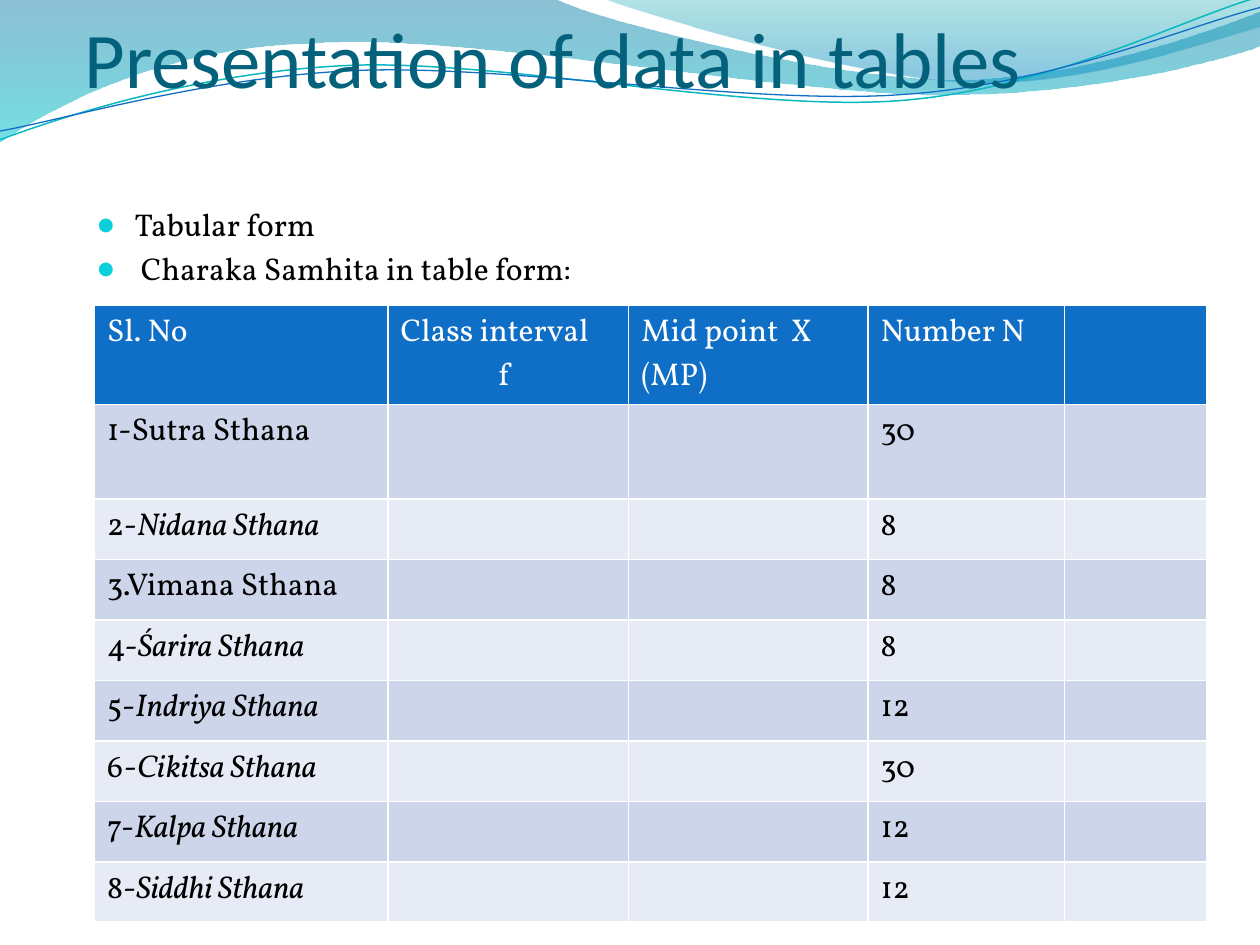
from lxml import etree
from pptx import Presentation
from pptx import util as u
from pptx.dml.color import RGBColor
from pptx.enum import text
from pptx.oxml.ns import qn

COLORS = {
    "title": "04617B", "body": "000000", "white": "FFFFFF", "bullet": "0BD0D9",
    "header": "0F6FC6", "odd": "CCD5EA", "even": "E7EBF5",
    "blue": "0074A1", "cyan": "00C6CF", "teal": "00A1A9", "sky": "008BBF",
    "aqua_line": "0AB8BF", "blue_line": "0F6FC6",
}
TITLE_FONT, BODY_FONT = "Calibri", "Vollkorn"

TITLE = "Presentation of data in tables"
BULLETS = ["Tabular form", " Charaka Samhita in table form:"]
HEADERS = [["Sl. No"], ["Class interval", "f "], ["Mid point  X (MP)"], ["Number N"], []]
# Plain part, italic part, number
STHANAS = [
    ("1-Sutra Sthana", "", 30), ("2-", "Nidana Sthana", 8),
    ("3.Vimana Sthana", "", 8), ("4-", "Śarira Sthana", 8),
    ("5-", "Indriya Sthana", 12), ("6-", "Cikitsa Sthana", 30),
    ("7-", "Kalpa Sthana", 12), ("8-", "Siddhi Sthana", 12),
]
COLUMN_WIDTHS = [2.33, 1.91, 1.9, 1.56, 1.13]
ROW_HEIGHTS = [0.79, 0.75] + [0.48] * 7

# Each segment is an end point, or two control points and an end point
BANDS = [
    {"start": (0, 0),
     "segments": [(4.4, -0.01), (4.76, 0.17, 6.64, 0.63, 7.58, 0.63),
                  (8.53, 0.63, 9.58, 0.26, 10, 0.09), (10.01, 0.36),
                  (9.83, 0.44, 8.7, 0.76, 7.46, 0.75),
                  (6.22, 0.75, 3.82, 0.28, 2.57, 0.34),
                  (1.29, 0.36, 0.46, 0.83, -0.01, 1.13), (0, 0)],
     "stops": [(0, "blue", 45), (1, "cyan", 55)]},
    {"start": (4.79, -0.01),
     "segments": [(5.09, 0.11, 6.82, 0.62, 7.69, 0.65),
                  (8.56, 0.69, 9.61, 0.32, 10, 0.21), (10, 0), (4.79, -0.01)],
     "stops": [(0, "teal", 30), (0.8, "sky", 45)]},
]
WAVES = [
    {"start": (0, 1.11),
     "segments": [(0.48, 0.93, 1.58, 0.57, 2.77, 0.52),
                  (3.95, 0.47, 5.93, 0.89, 7.13, 0.8),
                  (8.33, 0.71, 9.38, 0.15, 9.98, -0.02)],
     "line": ("aqua_line", 0.85)},
    {"start": (0, 1.04),
     "segments": [(0.47, 0.96, 1.64, 0.61, 2.83, 0.56),
                  (4.03, 0.51, 5.97, 0.84, 7.17, 0.75),
                  (8.36, 0.67, 9.41, 0.21, 10, 0.06)],
     "line": ("blue_line", 0.75)},
]


def rgb(name):
    return RGBColor.from_string(COLORS[name])


def add_child(parent, tag, **attributes):
    return etree.SubElement(parent, qn(tag), attributes)


def add_outline(slide, outline, close):
    """Draw through all points, then join each control pair and end point into a curve."""
    segments = [list(zip(segment[::2], segment[1::2])) for segment in outline["segments"]]
    builder = slide.shapes.build_freeform(*map(u.Inches, outline["start"]))
    builder.add_line_segments(
        [(u.Inches(x), u.Inches(y)) for points in segments for x, y in points], close=close)
    shape = builder.convert_to_shape()
    shape.shadow.inherit = False
    lines = iter(list(shape._element.spPr.iter(qn("a:lnTo"))))
    for points in segments:
        first, *others = [next(lines) for _ in points]
        if others:
            first.addprevious(curve := etree.Element(qn("a:cubicBezTo")))
            for line in (first, *others):
                curve.append(line[0])
                line.getparent().remove(line)
    return shape


def add_band(slide, band):
    shape = add_outline(slide, band, close=True)
    shape.line.fill.background()
    shape.fill.gradient()
    shape.fill.gradient_angle = 270
    for stop, (position, color, _) in zip(shape.fill.gradient_stops, band["stops"]):
        stop.position = position
        stop.color.rgb = rgb(color)
    colors = shape._element.spPr.iter(qn("a:srgbClr"))
    for element, (_, _, opacity) in zip(colors, band["stops"]):
        add_child(element, "a:alpha", val=str(opacity * 1000))


def add_wave(slide, wave):
    shape = add_outline(slide, wave, close=False)
    shape.fill.background()
    color, width = wave["line"]
    shape.line.color.rgb = rgb(color)
    shape.line.width = u.Pt(width)


def add_run(paragraph, content, color, size=18, font=BODY_FONT, italic=False):
    run = paragraph.add_run()
    run.text = content
    run.font.size = u.Pt(size)
    run.font.name = font
    run.font.bold = False
    run.font.italic = italic
    run.font.color.rgb = rgb(color)


def next_paragraph(frame, index):
    return frame.paragraphs[0] if index == 0 else frame.add_paragraph()


def format_title(slide):
    title = slide.shapes.title
    title.left, title.top, title.width, title.height = map(u.Inches, (0.67, 0.25, 8.92, 0.58))
    frame = title.text_frame
    frame.margin_left = frame.margin_right = frame.margin_bottom = 0
    frame.margin_top = u.Inches(0.05)
    frame.vertical_anchor = text.MSO_ANCHOR.BOTTOM
    frame.auto_size = text.MSO_AUTO_SIZE.NONE
    frame.paragraphs[0].alignment = text.PP_ALIGN.LEFT
    add_run(frame.paragraphs[0], TITLE, "title", 45, TITLE_FONT)
    slide.shapes._spTree.append(title._element)  # in front of the waves


def add_bullets(slide):
    box = slide.shapes.add_textbox(*map(u.Inches, (0.67, 1.58, 8.92, 5.08)))
    frame = box.text_frame
    frame.word_wrap = True
    indent = u.Inches(0.3)
    for index, bullet in enumerate(BULLETS):
        paragraph = next_paragraph(frame, index)
        paragraph.space_before = u.Pt(3.6)
        add_run(paragraph, bullet, "body")
        properties = paragraph._p.get_or_add_pPr()
        properties.set("marL", str(indent))
        properties.set("indent", str(-indent))
        add_child(add_child(properties, "a:buClr"), "a:srgbClr", val=COLORS["bullet"])
        add_child(properties, "a:buSzPct", val="95000")
        add_child(properties, "a:buFont", typeface=TITLE_FONT)
        add_child(properties, "a:buChar", char="●")


def format_cell(cell, fill):
    properties = cell._tc.get_or_add_tcPr()
    for side in "LRTB":
        line = add_child(properties, f"a:ln{side}", w=str(u.Pt(1)))
        add_child(add_child(line, "a:solidFill"), "a:srgbClr", val=COLORS["white"])
    cell.fill.solid()
    cell.fill.fore_color.rgb = rgb(fill)


def add_sthana_table(slide):
    table = slide.shapes.add_table(
        len(ROW_HEIGHTS), len(COLUMN_WIDTHS), u.Inches(0.75), u.Inches(2.42),
        u.Inches(sum(COLUMN_WIDTHS)), u.Inches(sum(ROW_HEIGHTS))).table
    for column, width in zip(table.columns, COLUMN_WIDTHS):
        column.width = u.Inches(width)
    for index, (row, height) in enumerate(zip(table.rows, ROW_HEIGHTS)):
        row.height = u.Inches(height)
        fill = "header" if index == 0 else "odd" if index % 2 else "even"
        for cell in row.cells:
            format_cell(cell, fill)

    for column, lines in enumerate(HEADERS):
        for index, line in enumerate(lines):
            paragraph = next_paragraph(table.cell(0, column).text_frame, index)
            if index:
                paragraph.alignment = text.PP_ALIGN.CENTER
            add_run(paragraph, line, "white")
    for row, (plain, italic, number) in enumerate(STHANAS, start=1):
        name = table.cell(row, 0).text_frame.paragraphs[0]
        add_run(name, plain, "body")
        if italic:
            add_run(name, italic, "body", italic=True)
        add_run(table.cell(row, 3).text_frame.paragraphs[0], str(number), "body")


def main():
    presentation = Presentation()
    presentation.slide_width, presentation.slide_height = u.Inches(10), u.Inches(7.5)
    slide = presentation.slides.add_slide(presentation.slide_layouts[5])
    for band in BANDS:
        add_band(slide, band)
    for wave in WAVES:
        add_wave(slide, wave)
    format_title(slide)
    add_bullets(slide)
    add_sthana_table(slide)
    presentation.save("out.pptx")


if __name__ == "__main__":
    main()
